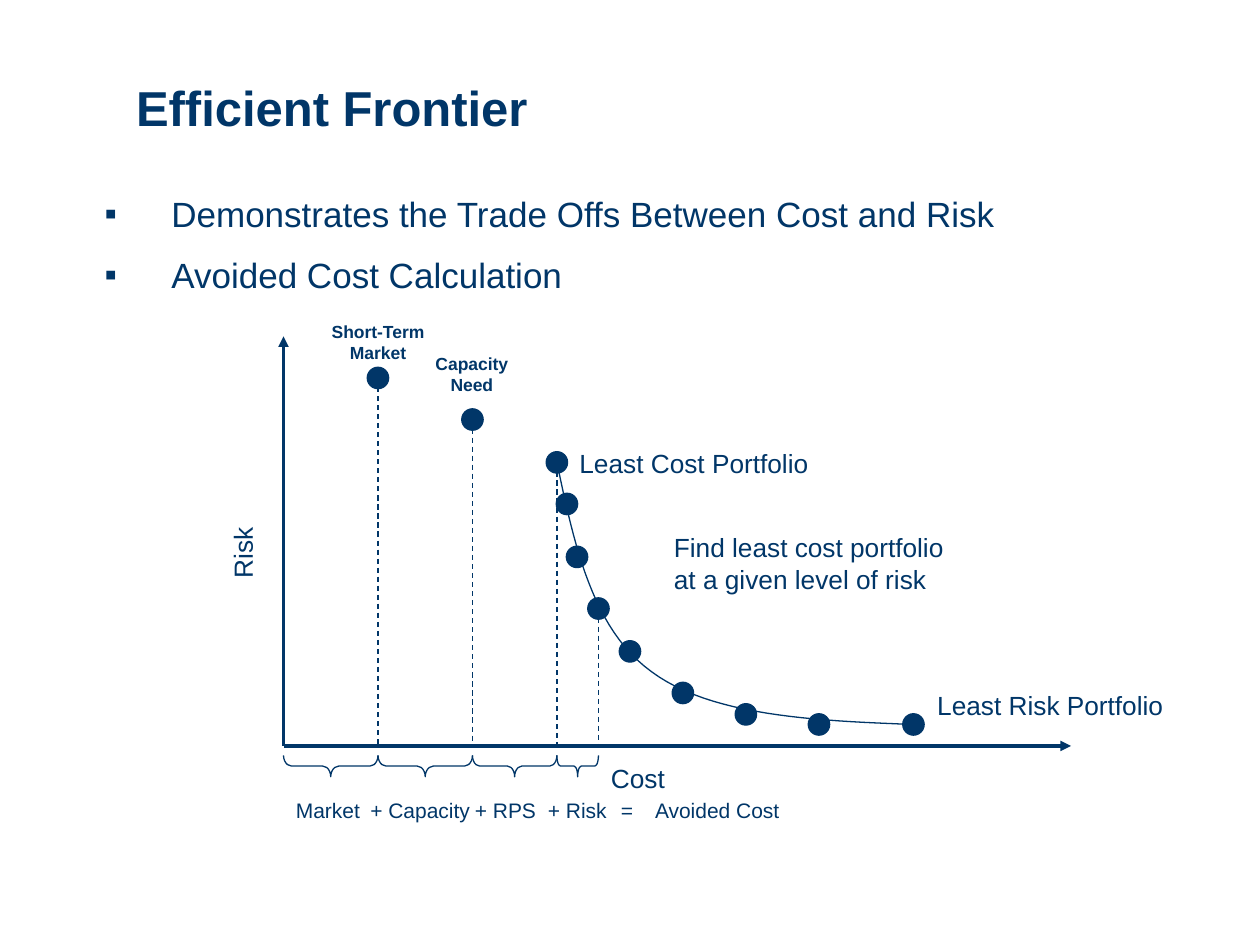
from dataclasses import dataclass
from itertools import pairwise

from lxml import etree
from pptx import Presentation
from pptx import util as u
from pptx.dml.color import RGBColor
from pptx.enum import dml, shapes, text
from pptx.oxml.ns import qn


@dataclass(frozen=True)
class Theme:
    """Colours, font and type sizes of the slide."""
    navy: RGBColor = RGBColor(0x01, 0x36, 0x68)
    font: str = "Arial"
    title: int = 28
    bullet: int = 20
    label: int = 15
    term: int = 12
    tag: int = 10
    thin: float = 0.75
    axis: float = 2


class FrontierSlide:
    """Draws styled elements on one slide."""

    def __init__(self, slide, theme):
        self.slide, self.theme = slide, theme

    def style(self, paragraph, size, bold=False):
        """Set the font of a paragraph."""
        font = paragraph.font
        font.name, font.size, font.bold = self.theme.font, u.Pt(size), bold
        font.color.rgb = self.theme.navy

    def outline(self, line, width):
        """Colour a line and set its width."""
        line.color.rgb = self.theme.navy
        line.width = u.Pt(width)

    def clear_insets(self, frame):
        """Remove all inner margins."""
        frame.margin_left = frame.margin_right = 0
        frame.margin_top = frame.margin_bottom = 0

    def title(self, words, left, top, width, height):
        """Place and fill the title placeholder."""
        heading = self.slide.shapes.title
        heading.left, heading.top = u.Inches(left), u.Inches(top)
        heading.width, heading.height = u.Inches(width), u.Inches(height)
        frame = heading.text_frame
        frame.text = words
        frame.auto_size = text.MSO_AUTO_SIZE.NONE
        frame.vertical_anchor = text.MSO_ANCHOR.BOTTOM
        self.clear_insets(frame)
        line = frame.paragraphs[0]
        line.alignment = text.PP_ALIGN.LEFT
        line.line_spacing = u.Pt(27)
        self.style(line, self.theme.title, bold=True)

    def bullets(self, points, left, top, width, height, indent):
        """Add a list with square bullets."""
        box = self.slide.shapes.add_textbox(*map(u.Inches, (left, top, width, height)))
        frame = box.text_frame
        frame.word_wrap = True
        self.clear_insets(frame)
        frame.text = "\n".join(points)
        for index, point in enumerate(frame.paragraphs):
            properties = point._p.get_or_add_pPr()
            properties.set("marL", str(u.Inches(indent)))
            properties.set("indent", str(-u.Inches(indent)))
            etree.SubElement(properties, qn("a:buFont"), typeface=self.theme.font)
            etree.SubElement(properties, qn("a:buChar"), char="▪")
            point.line_spacing = u.Pt(26)
            if index:
                point.space_before = u.Pt(9)
            self.style(point, self.theme.bullet)

    def label(self, words, left, top, width, height, size, wrap=False,
              bold=False, centred=False, rotation=0, tab=None):
        """Add a text label."""
        box = self.slide.shapes.add_textbox(*map(u.Inches, (left, top, width, height)))
        box.rotation = rotation
        frame = box.text_frame
        frame.word_wrap = wrap
        frame.auto_size = text.MSO_AUTO_SIZE.SHAPE_TO_FIT_TEXT
        line = frame.paragraphs[0]
        if tab:
            stops = etree.SubElement(line._p.get_or_add_pPr(), qn("a:tabLst"))
            etree.SubElement(stops, qn("a:tab"), pos=str(u.Inches(tab)), algn="l")
        line.add_run().text = words
        if centred:
            line.alignment = text.PP_ALIGN.CENTER
        self.style(line, size, bold)

    def line(self, start, end, width, arrow=False, dashed=False):
        """Add a straight line, optionally dashed or with an arrowhead."""
        connector = self.slide.shapes.add_connector(
            shapes.MSO_CONNECTOR.STRAIGHT, *map(u.Inches, (*start, *end)))
        self.outline(connector.line, width)
        if dashed:
            connector.line.dash_style = dml.MSO_LINE.DASH
        if arrow:
            etree.SubElement(connector.line._get_or_add_ln(), qn("a:tailEnd"), type="triangle")
        etree.SubElement(connector._element.spPr, qn("a:effectLst"))

    def curve(self, knots, steps=24):
        """Add an open curve through chained cubic segments."""
        points = []
        for first in range(0, len(knots) - 1, 3):
            segment = knots[first:first + 4]
            for step in range(1, steps + 1):
                t = step / steps
                weights = ((1 - t) ** 3, 3 * t * (1 - t) ** 2, 3 * t * t * (1 - t), t ** 3)
                points.append(tuple(
                    u.Inches(sum(w * knot[axis] for w, knot in zip(weights, segment)))
                    for axis in (0, 1)))
        builder = self.slide.shapes.build_freeform(*map(u.Inches, knots[0]))
        builder.add_line_segments(points, close=False)
        frontier = builder.convert_to_shape()
        frontier.shadow.inherit = False
        frontier.fill.background()
        self.outline(frontier.line, self.theme.thin)

    def dot(self, x, y, size=0.17):
        """Add a filled dot centred on a point."""
        portfolio = self.slide.shapes.add_shape(
            shapes.MSO_SHAPE.OVAL,
            *map(u.Inches, (x - size / 2, y - size / 2, size, size)))
        portfolio.shadow.inherit = False
        portfolio.fill.solid()
        portfolio.fill.fore_color.rgb = self.theme.navy
        self.outline(portfolio.line, self.theme.thin)

    def brace(self, start, end, middle, depth=0.17):
        """Add a brace that spans two costs and points down."""
        span = end - start
        left, top = (start + end - depth) / 2, middle - span / 2
        brace = self.slide.shapes.add_shape(
            shapes.MSO_SHAPE.LEFT_BRACE, *map(u.Inches, (left, top, depth, span)))
        brace.rotation = 270
        brace.adjustments[0] = span / 2
        brace.shadow.inherit = False
        brace.fill.background()
        self.outline(brace.line, self.theme.thin)


def main():
    """Build the efficient frontier slide."""
    deck = Presentation()
    deck.slide_width, deck.slide_height = u.Inches(10), u.Inches(7.5)
    theme = Theme()
    page = FrontierSlide(deck.slides.add_slide(deck.slide_layouts[5]), theme)

    page.title("Efficient Frontier", 1.08, 0.12, 8.42, 0.96)
    page.bullets(("Demonstrates the Trade Offs Between Cost and Risk",
                  "Avoided Cost Calculation"), 0.83, 1.5, 8.4, 1, indent=0.53)

    origin = (2.25, 5.92)
    for tip in ((2.25, 2.67), (8.5, 5.92)):
        page.line(origin, tip, theme.axis, arrow=True)
    page.curve([(4.42, 3.67), (4.56, 4.33), (4.7, 4.99), (5.17, 5.33),
                (5.64, 5.68), (6.45, 5.72), (7.25, 5.75)])

    stages = [(3, 3), (3.75, 3.33), (4.42, 3.67), (4.75, 4.83)]
    others = [(4.5, 4), (4.58, 4.42), (5, 5.17), (5.42, 5.5),
              (5.92, 5.67), (6.5, 5.75), (7.25, 5.75)]
    for cost, risk in stages:
        page.line((cost, risk), (cost, origin[1]), theme.thin, dashed=True)
    for portfolio in stages + others:
        page.dot(*portfolio)
    for start, end in pairwise([origin[0]] + [cost for cost, _ in stages]):
        page.brace(start, end, middle=6.08)

    page.label("Risk", 1.62, 4.21, 0.61, 0.35, theme.label, rotation=270)
    page.label("Cost", 4.75, 6, 0.67, 0.35, theme.label, wrap=True)
    page.label("Least Cost Portfolio", 4.5, 3.5, 2.02, 0.35, theme.label)
    page.label("Least Risk Portfolio", 7.34, 5.42, 2, 0.35, theme.label)
    page.label("Find least cost portfolio at a given level of risk",
               5.25, 4.17, 2.42, 0.6, theme.label, wrap=True)
    for words, left, top, width in (("Short-Term Market", 2.5, 2.5, 1),
                                    ("Capacity Need", 3.33, 2.75, 0.83)):
        page.label(words, left, top, width, 0.43, theme.tag,
                   wrap=True, bold=True, centred=True)
    for words, left, width in (("+ Capacity", 2.84, 0.99), ("+ RPS", 3.67, 0.69),
                               ("+ Risk", 4.25, 0.67)):
        page.label(words, left, 6.28, width, 0.3, theme.term)
    page.label("Market", 2.25, 6.28, 1, 0.3, theme.term, wrap=True)
    page.label("=\tAvoided Cost", 4.83, 6.28, 1.58, 0.3, theme.term, wrap=True, tab=0.27)

    deck.save("out.pptx")


if __name__ == "__main__":
    main()
